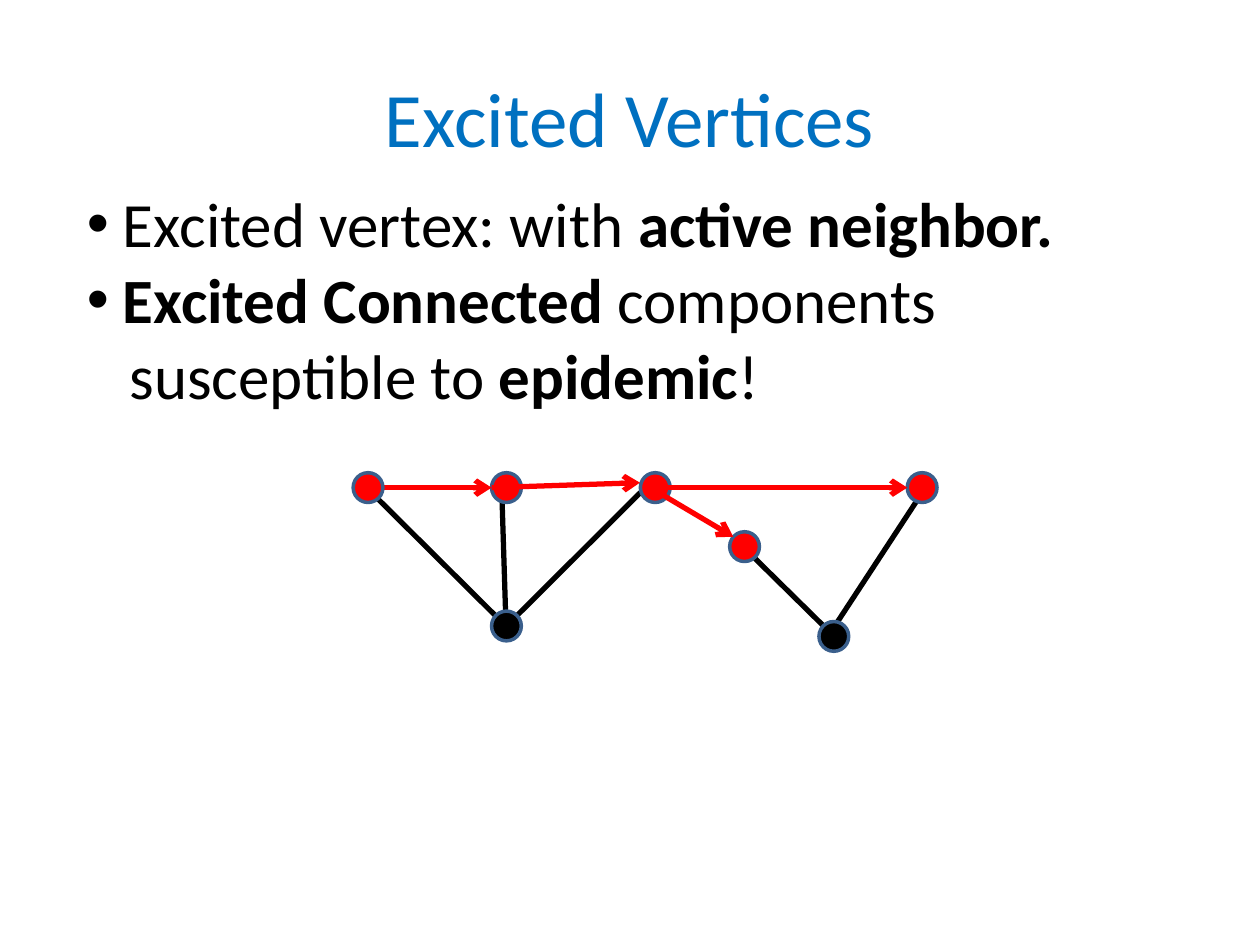
from lxml import etree
from pptx import Presentation
from pptx.dml.color import RGBColor
from pptx.enum.shapes import MSO_CONNECTOR, MSO_SHAPE
from pptx.enum.text import MSO_ANCHOR, PP_ALIGN
from pptx.oxml.ns import qn
from pptx.util import Cm, Pt

STRAIGHT = MSO_CONNECTOR.STRAIGHT
OVAL = MSO_SHAPE.OVAL
MIDDLE = MSO_ANCHOR.MIDDLE
CENTER = PP_ALIGN.CENTER
LEFT = PP_ALIGN.LEFT

COLORS = {"title": "0070C0", "text": "000000", "inactive": "000000",
          "excited": "FF0000", "outline": "3A5F8C"}
FONT = "Calibri"
DIAMETER = 0.6
TOP_ROW = 9.83

EDGES = [
    ((10.41, 12.83), (7.49, 9.93)),
    ((10.41, 12.42), (13.11, 9.73)),
    ((17.02, 13.03), (15.09, 11.13)),
    ((16.69, 12.83), (18.59, 9.93)),
    ((10.21, 12.93), (10.11, 9.73)),
]
FIRST_ARROW = ((7.11, TOP_ROW), (9.91, TOP_ROW))
ARROWS = [
    ((9.91, TOP_ROW), (12.9, 9.73)),
    ((13.31, TOP_ROW), (18.29, TOP_ROW)),
    ((13.11, TOP_ROW), (14.78, 10.82)),
]
FIRST_VERTEX = (7.42, TOP_ROW, "excited")
VERTICES = [
    (10.21, 12.62, "inactive"),
    (10.21, TOP_ROW, "excited"),
    (13.21, TOP_ROW, "excited"),
    (15.01, 11.02, "excited"),
    (16.81, 12.83, "inactive"),
    (18.59, TOP_ROW, "excited"),
]
STATEMENTS = [
    (True, [("Excited vertex: with ", False), ("active neighbor.", True)]),
    (True, [("Excited Connected", True), (" components", False)]),
    (False, [("susceptible to ", False), ("epidemic", True), ("!", False)]),
]


def color(name):
    return RGBColor.from_string(COLORS[name])


def add_text_box(slide, left, top, width, height):
    shape = slide.shapes.add_textbox(Cm(left), Cm(top), Cm(width), Cm(height))
    frame = shape.text_frame
    frame.word_wrap = True
    frame.vertical_anchor = MIDDLE
    return frame


def style_paragraph(paragraph, size, color_name, alignment):
    paragraph.alignment = alignment
    paragraph.font.name = FONT
    paragraph.font.size = Pt(size)
    paragraph.font.color.rgb = color(color_name)


def indent_paragraph(paragraph, bulleted):
    properties = paragraph._p.get_or_add_pPr()
    properties.set("marL", str(Cm(0.73 if bulleted else 0.86)))
    if bulleted:
        properties.set("indent", str(Cm(-0.73)))
        bullet_font = etree.Element(qn("a:buFont"), typeface="Arial")
        bullet = etree.Element(qn("a:buChar"), char="•")
        properties.insert(0, bullet_font)
        properties.insert(1, bullet)


def add_title(slide):
    frame = add_text_box(slide, 1.27, 0.76, 22.86, 3.18)
    paragraph = frame.paragraphs[0]
    paragraph.text = "Excited Vertices"
    style_paragraph(paragraph, 44, "title", CENTER)


def add_statements(slide):
    frame = add_text_box(slide, 1.5, 4.11, 22.86, 3.81)
    for index, (bulleted, parts) in enumerate(STATEMENTS):
        paragraph = frame.add_paragraph() if index else frame.paragraphs[0]
        indent_paragraph(paragraph, bulleted)
        style_paragraph(paragraph, 36, "text", LEFT)
        for text, bold in parts:
            run = paragraph.add_run()
            run.text = text
            run.font.bold = bold


def add_edge(slide, start, end, color_name, arrow=False):
    connector = slide.shapes.add_connector(
        STRAIGHT, *(Cm(value) for value in start + end))
    connector.line.width = Pt(3)
    connector.line.color.rgb = color(color_name)
    if arrow:
        etree.SubElement(connector.line._get_or_add_ln(),
                         qn("a:tailEnd"), type="arrow")
    etree.SubElement(connector._element.spPr, qn("a:effectLst"))


def add_vertex(slide, center_x, center_y, color_name):
    shape = slide.shapes.add_shape(
        OVAL, Cm(center_x - DIAMETER / 2), Cm(center_y - DIAMETER / 2),
        Cm(DIAMETER), Cm(DIAMETER))
    shape.shadow.inherit = False
    shape.fill.solid()
    shape.fill.fore_color.rgb = color(color_name)
    shape.line.width = Pt(2)
    shape.line.color.rgb = color("outline")


def add_graph(slide):
    for start, end in EDGES:
        add_edge(slide, start, end, "inactive")
    for vertex in VERTICES:
        add_vertex(slide, *vertex)
    add_edge(slide, *FIRST_ARROW, "excited", arrow=True)
    add_vertex(slide, *FIRST_VERTEX)
    for start, end in ARROWS:
        add_edge(slide, start, end, "excited", arrow=True)


def main():
    presentation = Presentation()
    presentation.slide_width = Cm(25.4)
    presentation.slide_height = Cm(19.05)
    slide = presentation.slides.add_slide(presentation.slide_layouts[6])
    add_title(slide)
    add_graph(slide)
    add_statements(slide)
    presentation.save("out.pptx")


if __name__ == "__main__":
    main()
